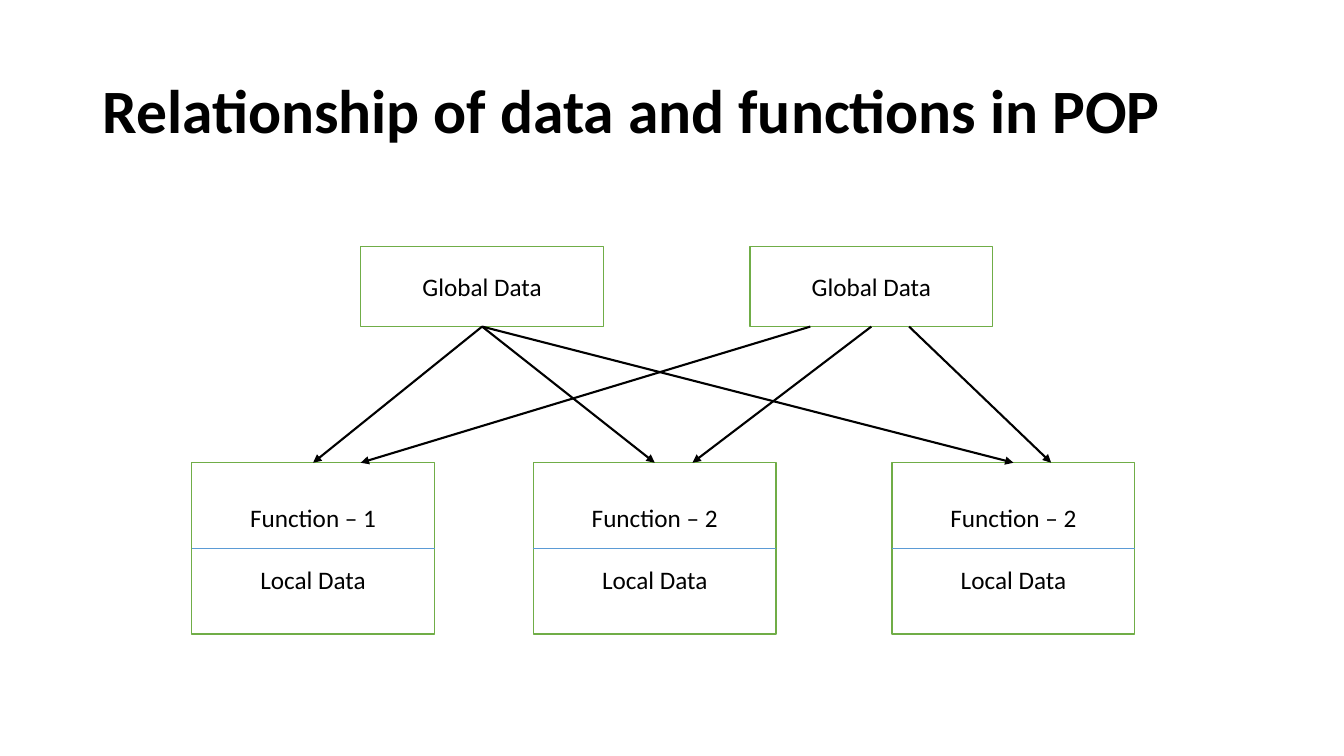
from lxml.etree import SubElement
from pptx import Presentation
from pptx.dml.color import RGBColor
from pptx.enum.shapes import MSO_CONNECTOR, MSO_SHAPE
from pptx.enum.text import MSO_ANCHOR, MSO_AUTO_SIZE, PP_ALIGN
from pptx.oxml.ns import qn
from pptx.util import Cm, Pt

COLORS = {"text": "000000", "fill": "FFFFFF", "border": "70AD47",
          "divider": "5B9BD5", "arrow": "000000"}
FONT = "Calibri"
BOTTOM, LEFT, TOP, RIGHT = 2, 1, 0, 3

BOX_W = 6.12
GLOBAL_Y, GLOBAL_H = 6.22, 2.01
FUNCTION_Y, FUNCTION_H = 11.66, 4.32


def add_box(x, y, h, lines):
    box = s.shapes.add_shape(MSO_SHAPE.RECTANGLE, Cm(x), Cm(y), Cm(BOX_W), Cm(h))
    box.shadow.inherit = False
    box.fill.solid()
    box.fill.fore_color.rgb = RGBColor.from_string(COLORS["fill"])
    box.line.color.rgb = RGBColor.from_string(COLORS["border"])
    box.line.width = Pt(1)
    tf = box.text_frame
    tf.vertical_anchor = MSO_ANCHOR.MIDDLE
    for i, line in enumerate(lines):
        p = tf.add_paragraph() if i else tf.paragraphs[0]
        p.alignment = PP_ALIGN.CENTER
        p.space_before = Pt(22 if i else 0)
        r = p.add_run()
        r.text = line
        r.font.size = Pt(18)
        r.font.name = FONT
        r.font.color.rgb = RGBColor.from_string(COLORS["text"])
    return box


def add_line(color, width, x1=0, y1=0, x2=0, y2=0):
    line = s.shapes.add_connector(MSO_CONNECTOR.STRAIGHT, Cm(x1), Cm(y1), Cm(x2), Cm(y2))
    line.line.color.rgb = RGBColor.from_string(COLORS[color])
    line.line.width = Pt(width)
    if color == "arrow":
        SubElement(line.line._get_or_add_ln(), qn("a:tailEnd"), type="triangle")
    SubElement(line._element.spPr, qn("a:effectLst"))
    return line


prs = Presentation()
prs.slide_width, prs.slide_height = Cm(33.87), Cm(19.05)
s = prs.slides.add_slide(prs.slide_layouts[5])

title = s.shapes.title
title.left, title.top, title.width, title.height = Cm(2.33), Cm(1.01), Cm(29.21), Cm(3.68)
tf = title.text_frame
tf.word_wrap = True
tf.auto_size = MSO_AUTO_SIZE.NONE
tf.vertical_anchor = MSO_ANCHOR.MIDDLE
p = tf.paragraphs[0]
p.alignment = PP_ALIGN.LEFT
p.line_spacing = 0.9
r = p.add_run()
r.text = "Relationship of data and functions in POP"
r.font.size = Pt(44)
r.font.bold = True
r.font.name = FONT
r.font.color.rgb = RGBColor.from_string(COLORS["text"])

left_data, right_data = [add_box(x, GLOBAL_Y, GLOBAL_H, ["Global Data"])
                         for x in (9.09, 18.9)]

functions = [add_box(x, FUNCTION_Y, FUNCTION_H, [name, "Local Data"])
             for x, name in ((4.83, "Function – 1"),
                             (13.44, "Function – 2"),
                             (22.48, "Function – 2"))]

for box in functions:
    divider = add_line("divider", 0.5)
    divider.begin_connect(box, LEFT)
    divider.end_connect(box, RIGHT)

for box in functions:
    arrow = add_line("arrow", 1.5)
    arrow.begin_connect(left_data, BOTTOM)
    arrow.end_connect(box, TOP)

# Arrows from the right box land beside those from the left box
for x1, x2 in ((20.42, 9.09), (21.96, 17.45), (22.91, 26.49)):
    arrow = add_line("arrow", 1.5, x1, GLOBAL_Y + GLOBAL_H, x2, FUNCTION_Y)
    if x1 == 21.96:
        arrow.begin_connect(right_data, BOTTOM)

prs.save("out.pptx")
